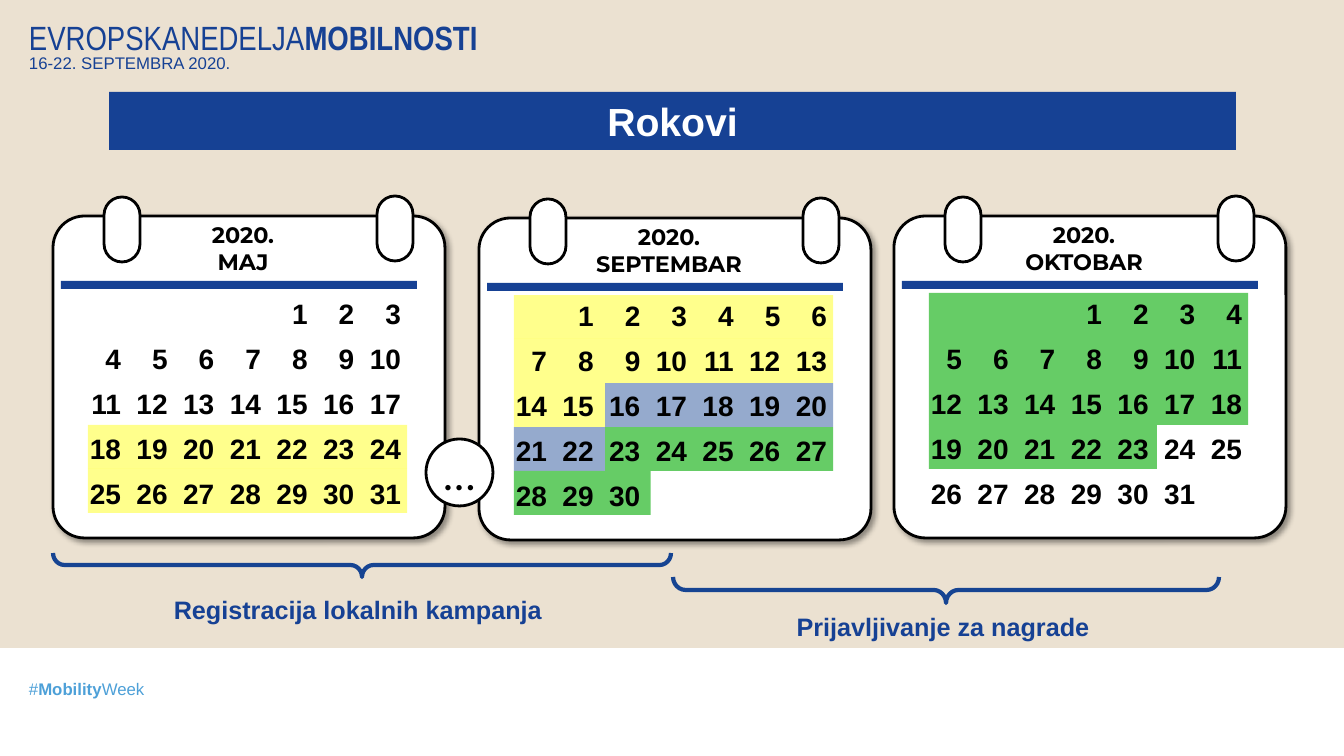
from lxml.etree import SubElement
from pptx import Presentation
from pptx.dml.color import RGBColor
from pptx.enum.shapes import MSO_SHAPE
from pptx.enum.text import MSO_ANCHOR, PP_ALIGN
from pptx.oxml.ns import qn
from pptx.util import Emu, Pt

NAVY, BRACE_BLUE, SKY = "164194", "164492", "4DA0D8"
SAND, WHITE, BLACK = "EBE1D1", "FFFFFF", "000000"
YELLOW, GREEN = "FFFF00", "66CC66"

COLUMN_PITCH = 46.67
FIRST_COLUMN_END = 35
BAND_CELL = 45.6
BAND_HEIGHT = 44
WEEK_PITCH = 45


def px(length):
    return Emu(round(length * 914400 / 100.8))


def rgb(color):
    return RGBColor.from_string(color)


class Deck:
    def __init__(self):
        self.presentation = Presentation()
        self.presentation.slide_width = px(1344)
        self.presentation.slide_height = px(756)
        self.slide = self.presentation.slides.add_slide(
            self.presentation.slide_layouts[6])

    def shape(self, kind, box, fill=None, line=None, width=2, radius=None, alpha=None):
        shape = self.slide.shapes.add_shape(kind, *map(px, box))
        shape.shadow.inherit = False
        if fill:
            shape.fill.solid()
            shape.fill.fore_color.rgb = rgb(fill)
        else:
            shape.fill.background()
        if line:
            shape.line.color.rgb = rgb(line)
            shape.line.width = Pt(width)
        else:
            shape.line.fill.background()
        if radius is not None:
            shape.adjustments[0] = radius
        if alpha:
            color = shape._element.spPr.find(qn("a:solidFill"))[0]
            SubElement(color, qn("a:alpha"), val=str(alpha * 1000))
        return shape

    def drop_shadow(self, shape):
        effects = shape._element.spPr.find(qn("a:effectLst"))
        shadow = SubElement(effects, qn("a:outerShdw"), blurRad=str(Pt(4)),
                            dist=str(Pt(3)), dir="2700000", algn="tl", rotWithShape="0")
        color = SubElement(shadow, qn("a:srgbClr"), val=BLACK)
        SubElement(color, qn("a:alpha"), val="40000")

    def fill_text(self, shape, text, size, color, bold=False, font="Arial",
                  align=PP_ALIGN.CENTER, anchor=MSO_ANCHOR.MIDDLE):
        frame = shape.text_frame
        frame.margin_left = frame.margin_right = frame.margin_top = frame.margin_bottom = 0
        frame.vertical_anchor = anchor
        frame.word_wrap = True
        frame.text = text
        for paragraph in frame.paragraphs:
            paragraph.alignment = align
            for run in paragraph.runs:
                self.style(run, size, color, bold, font)
        return frame

    def style(self, run, size, color, bold, font):
        run.font.size = Pt(size)
        run.font.color.rgb = rgb(color)
        run.font.bold = bold
        run.font.name = font

    def text(self, box, text, size, color, **style):
        textbox = self.slide.shapes.add_textbox(*map(px, box))
        return self.fill_text(textbox, text, size, color, anchor=MSO_ANCHOR.TOP, **style)

    def mixed_line(self, box, parts, size, color, font="Arial"):
        """Left-aligned line made of (text, bold) parts."""
        (first, first_bold), *others = parts
        frame = self.text(box, first, size, color, bold=first_bold, font=font,
                          align=PP_ALIGN.LEFT)
        for text, bold in others:
            run = frame.paragraphs[0].add_run()
            run.text = text
            self.style(run, size, color, bold, font)

    def week(self, left, top, first_column, days):
        """Row of day numbers, each ending at the tab stop of its weekday."""
        frame = self.text((left, top, 330, 34), "".join(f"\t{day}" for day in days),
                          20, BLACK, bold=True, align=PP_ALIGN.LEFT)
        tabs = SubElement(frame.paragraphs[0]._p.get_or_add_pPr(), qn("a:tabLst"))
        for column in range(first_column, first_column + len(days)):
            end = px(FIRST_COLUMN_END + column * COLUMN_PITCH)
            SubElement(tabs, qn("a:tab"), pos=str(end), algn="r")

    def calendar(self, left, top, month, first_column, day_count, bands):
        """Month card; bands are (week, column, days, color, alpha)."""
        card = self.shape(MSO_SHAPE.ROUNDED_RECTANGLE, (left, top, 392, 322),
                          WHITE, BLACK, radius=0.098)
        self.drop_shadow(card)
        for ring_left, ring_top in ((51, 19), (324, 20)):
            self.shape(MSO_SHAPE.ROUNDED_RECTANGLE,
                       (left + ring_left, top - ring_top, 36, 65),
                       WHITE, BLACK, radius=0.5)
        self.shape(MSO_SHAPE.RECTANGLE, (left + 8, top + 65, 356, 8), NAVY)
        self.text((left + 102, top + 5, 176, 54), f"2020.\n{month}", 16, BLACK,
                  bold=True, font="Montserrat")

        for week, column, days, color, alpha in bands:
            self.shape(MSO_SHAPE.RECTANGLE,
                       (left + 35 + column * BAND_CELL, top + 77 + week * BAND_HEIGHT,
                        days * BAND_CELL, BAND_HEIGHT), color, alpha=alpha)

        day, column, week_top = 1, first_column, top + 80
        while day <= day_count:
            next_day = min(day + 7 - column, day_count + 1)
            self.week(left + 33, week_top, column, range(day, next_day))
            day, column, week_top = next_day, 0, week_top + WEEK_PITCH

    def brace(self, left, top, length, depth):
        """Brace that opens upwards, given by its extent as drawn."""
        shift = (length - depth) // 2
        brace = self.shape(MSO_SHAPE.RIGHT_BRACE,
                           (left + shift, top - shift, depth, length),
                           line=BRACE_BLUE, width=3, radius=0.48)
        brace.rotation = 90


def main():
    deck = Deck()
    deck.shape(MSO_SHAPE.RECTANGLE, (0, 0, 1344, 756), SAND)
    deck.shape(MSO_SHAPE.RECTANGLE, (0, 648, 1344, 108), WHITE)
    deck.mixed_line((29, 17, 474, 40), [("EVROPSKANEDELJA", False), ("MOBILNOSTI", True)],
                    24, NAVY, "Arial Narrow")
    deck.text((29, 53, 224, 20), "16-22. SEPTEMBRA 2020.", 12, NAVY, align=PP_ALIGN.LEFT)
    deck.mixed_line((29, 679, 137, 20), [("#", False), ("Mobility", True), ("Week", False)],
                    12, SKY)
    heading = deck.shape(MSO_SHAPE.RECTANGLE, (109, 92, 1127, 58), NAVY)
    deck.fill_text(heading, "Rokovi", 28, WHITE, bold=True)

    deck.calendar(894, 216, "OKTOBAR", 3, 31, [
        (0, 0, 7, GREEN, None), (1, 0, 7, GREEN, None),
        (2, 0, 7, GREEN, None), (3, 0, 5, GREEN, None)])
    deck.calendar(479, 218, "SEPTEMBAR", 1, 30, [
        (0, 0, 7, YELLOW, 45), (1, 0, 7, YELLOW, 45), (2, 0, 2, YELLOW, 45),
        (2, 2, 5, BRACE_BLUE, 45), (3, 0, 2, BRACE_BLUE, 45),
        (3, 2, 5, GREEN, None), (4, 0, 3, GREEN, None)])
    deck.calendar(53, 216, "MAJ", 4, 31, [(3, 0, 7, YELLOW, 45), (4, 0, 7, YELLOW, 45)])
    skipped_months = deck.shape(MSO_SHAPE.OVAL, (426, 439, 67, 67), WHITE, BLACK)
    deck.fill_text(skipped_months, "…", 32, BLACK, font="Calibri")

    deck.brace(53, 553, 618, 24)
    deck.brace(673, 577, 546, 26)
    deck.text((162, 594, 392, 30), "Registracija lokalnih kampanja", 18, NAVY, bold=True)
    deck.text((785, 611, 316, 30), "Prijavljivanje za nagrade", 18, NAVY, bold=True)
    deck.presentation.save("out.pptx")


if __name__ == "__main__":
    main()
